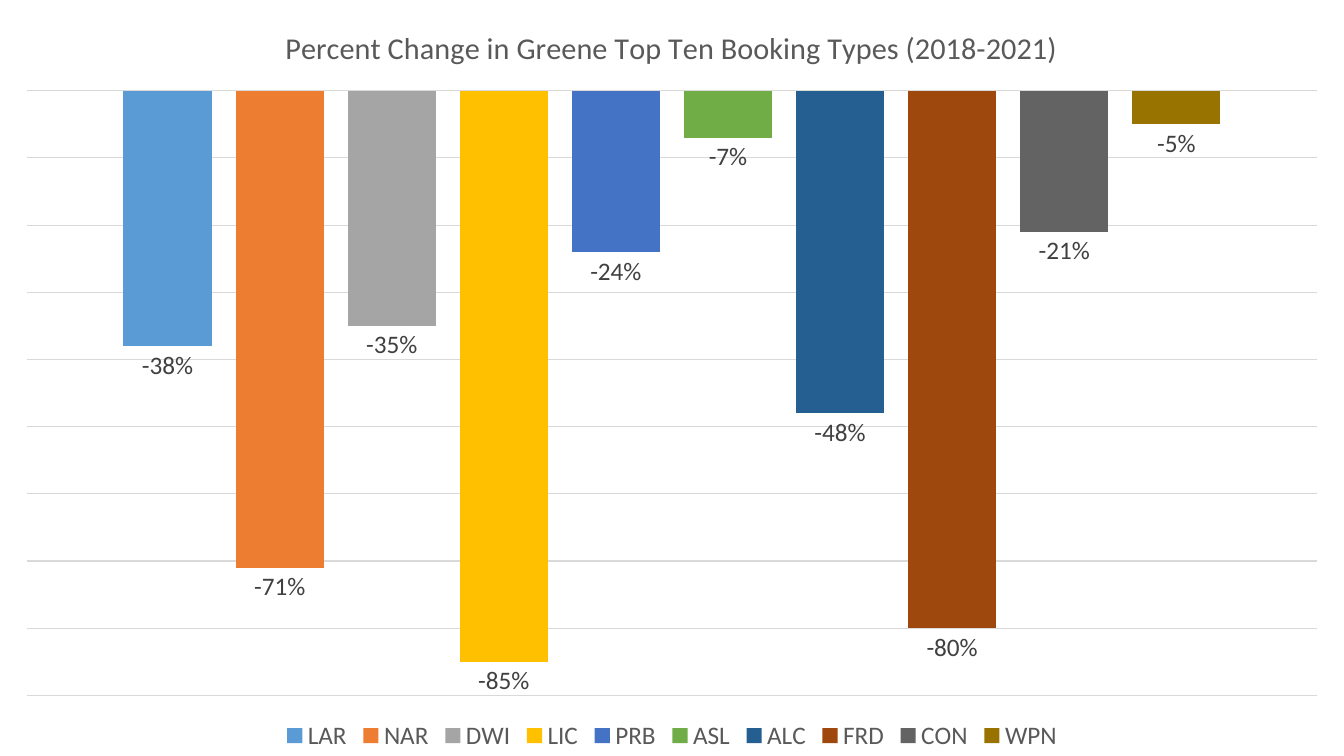
from lxml import etree
from pptx import Presentation
from pptx.chart.data import CategoryChartData as Data
from pptx.dml.color import RGBColor as Color
from pptx.enum.chart import XL_CHART_TYPE as Kind
from pptx.enum.chart import XL_LABEL_POSITION as Spot
from pptx.enum.chart import XL_LEGEND_POSITION as Place
from pptx.oxml.ns import qn
from pptx.util import Inches, Pt

FACE = "Calibri"
TITLE = "Percent Change in Greene Top Ten Booking Types (2018-2021)"
TYPES = [
    ("LAR", -0.38, "5B9BD5"),
    ("NAR", -0.71, "ED7D31"),
    ("DWI", -0.35, "A5A5A5"),
    ("LIC", -0.85, "FFC000"),
    ("PRB", -0.24, "4472C4"),
    ("ASL", -0.07, "70AD47"),
    ("ALC", -0.48, "255E91"),
    ("FRD", -0.80, "9E480E"),
    ("CON", -0.21, "636363"),
    ("WPN", -0.05, "997300"),
]
PLOT = {"x": 0.02, "y": 0.12, "w": 0.96, "h": 0.8}


def tint(code):
    return Color.from_string(code)


def style(font, size, code):
    font.name = FACE
    font.size = Pt(size)
    font.bold = False
    font.color.rgb = tint(code)


def add_bars(deck, slide):
    data = Data(number_format="0%")
    data.categories = ["1"]
    for name, value, _ in TYPES:
        data.add_series(name, [value])
    frame = slide.shapes.add_chart(
        Kind.COLUMN_CLUSTERED, 0, 0, deck.slide_width, deck.slide_height, data
    )
    chart = frame.chart
    style(chart.font, 18, "000000")
    return chart


def set_title(chart):
    chart.has_title = True
    title = chart.chart_title
    title.include_in_layout = False
    para = title.text_frame.paragraphs[0]
    para.text = TITLE
    style(para.runs[0].font, 21.6, "595959")


def set_axes(chart):
    chart.category_axis.visible = False
    axis = chart.value_axis
    axis.minimum_scale = -0.9
    axis.maximum_scale = 0
    axis.major_unit = 0.1
    axis.tick_labels.number_format = "0%"
    axis.tick_labels.number_format_is_linked = False
    axis.has_major_gridlines = True
    line = axis.major_gridlines.format.line
    line.color.rgb = tint("D9D9D9")
    line.width = Pt(0.75)
    axis.visible = False


def set_bars(chart):
    plot = chart.plots[0]
    plot.gap_width = 219
    plot.overlap = -27
    plot.vary_by_categories = False
    for bar, (_, _, code) in zip(plot.series, TYPES):
        bar.invert_if_negative = False
        bar.format.fill.solid()
        bar.format.fill.fore_color.rgb = tint(code)
        tags = bar.data_labels
        tags.show_value = True
        tags.number_format = "0%"
        tags.number_format_is_linked = False
        tags.position = Spot.OUTSIDE_END
        style(tags.font, 18, "404040")


def set_legend(chart):
    chart.has_legend = True
    chart.legend.position = Place.BOTTOM
    chart.legend.include_in_layout = False
    style(chart.legend.font, 18, "595959")


def fit_plot(chart):
    area = chart.element.find(".//" + qn("c:plotArea"))
    for old in area.findall(qn("c:layout")):
        area.remove(old)
    outer = etree.Element(qn("c:layout"))
    area.insert(0, outer)
    inner = etree.SubElement(outer, qn("c:manualLayout"))
    rules = {"layoutTarget": "inner", "xMode": "edge", "yMode": "edge", **PLOT}
    for tag, value in rules.items():
        etree.SubElement(inner, qn("c:" + tag)).set("val", str(value))


def main():
    deck = Presentation()
    deck.slide_width = Inches(13.33)
    deck.slide_height = Inches(7.5)
    slide = deck.slides.add_slide(deck.slide_layouts[6])
    chart = add_bars(deck, slide)
    set_title(chart)
    set_axes(chart)
    set_bars(chart)
    set_legend(chart)
    fit_plot(chart)
    deck.save("out.pptx")


if __name__ == "__main__":
    main()
